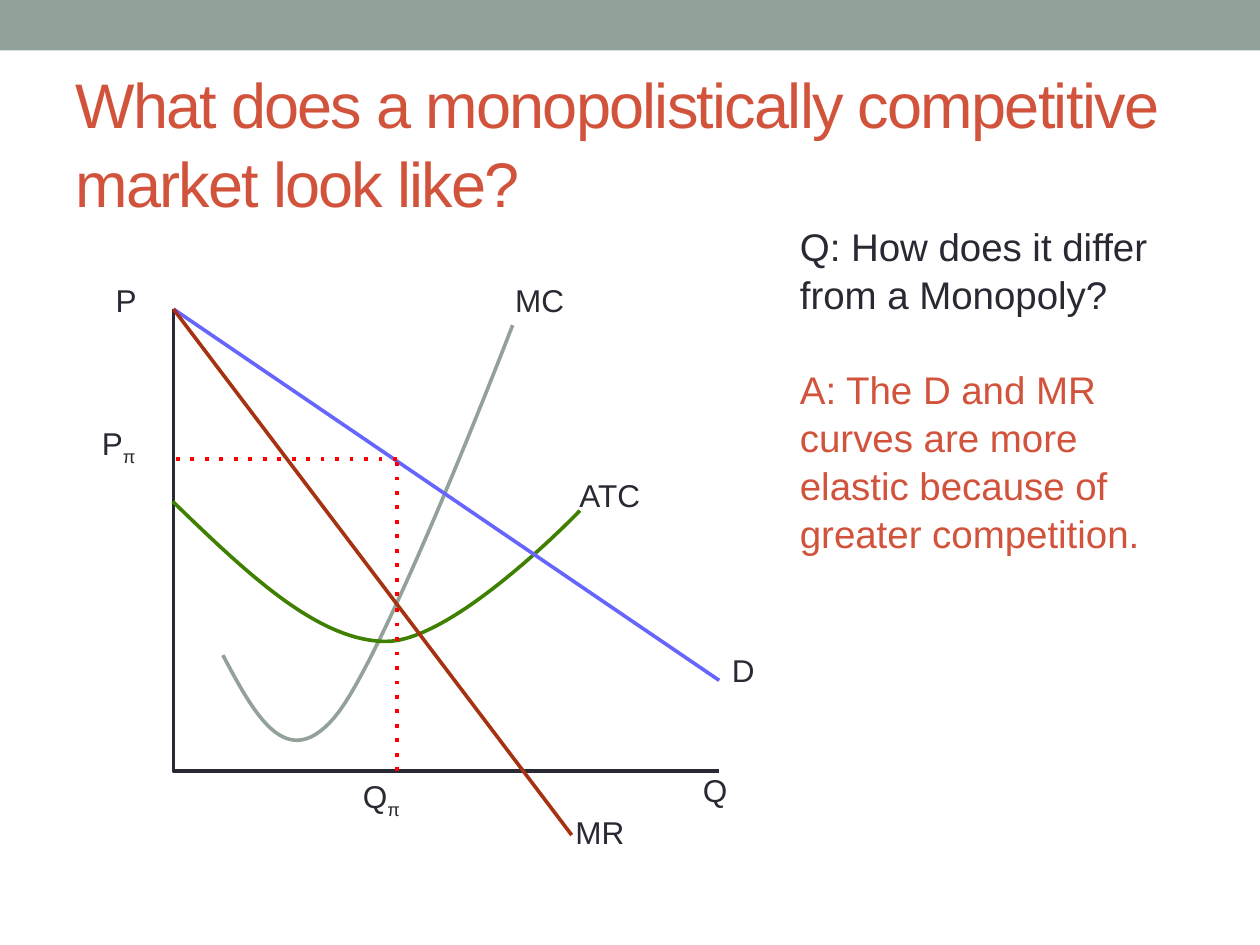
from lxml import etree
from pptx import Presentation
from pptx import util as u
from pptx.dml import color
from pptx.enum import dml, shapes, text
from pptx.oxml import ns

INK, RUST, SAGE = "292934", "D2533C", "93A299"
BLUE, BROWN, GREEN, RED = "6666FF", "A63212", "408000", "FF0000"


def rgb(value):
    return color.RGBColor.from_string(value)


def bezier(start, *segments, steps=30):
    points = [start]
    for control_1, control_2, end in segments:
        corners = (points[-1], control_1, control_2, end)
        for step in range(1, steps + 1):
            t = step / steps
            weights = ((1 - t) ** 3, 3 * t * (1 - t) ** 2, 3 * t * t * (1 - t), t ** 3)
            points.append(tuple(sum(w * c[axis] for w, c in zip(weights, corners))
                                for axis in (0, 1)))
    return points


class Sketch:
    """Draws the elements of an economics diagram on one slide."""

    font = "Arial"
    line_width = 2.08
    label_size = 18
    leading = 1.04

    def __init__(self, slide):
        self.slide = slide

    def bar(self, left, top, width, height, fill):
        shape = self.slide.shapes.add_shape(
            shapes.MSO_SHAPE.RECTANGLE, *map(u.Pt, (left, top, width, height)))
        shape.shadow.inherit = False
        shape.fill.solid()
        shape.fill.fore_color.rgb = rgb(fill)
        shape.line.fill.background()

    def style(self, run, size, ink):
        run.font.name = self.font
        run.font.size = u.Pt(size)
        run.font.color.rgb = rgb(ink)

    def stroke(self, shape, ink):
        shape.line.color.rgb = rgb(ink)
        shape.line.width = u.Pt(self.line_width)

    def box(self, left, top, width, height, wrap=True):
        frame = self.slide.shapes.add_textbox(
            *map(u.Pt, (left, top, width, height))).text_frame
        frame.word_wrap = wrap
        frame.auto_size = text.MSO_AUTO_SIZE.SHAPE_TO_FIT_TEXT
        return frame

    def title(self, words, left, top, width, height):
        frame = self.box(left, top, width, height)
        frame.auto_size = text.MSO_AUTO_SIZE.NONE
        frame.vertical_anchor = text.MSO_ANCHOR.MIDDLE
        frame.text = words
        paragraph = frame.paragraphs[0]
        paragraph.line_spacing = self.leading
        run = paragraph.runs[0]
        self.style(run, 36, RUST)
        run.font._element.set("spc", "-100")

    def body(self, entries, left, top, width, height, size, gap):
        frame = self.box(left, top, width, height)
        frame.text = "\n".join(words for words, ink in entries)
        for index, (paragraph, entry) in enumerate(zip(frame.paragraphs, entries)):
            paragraph.line_spacing = self.leading
            paragraph.space_before = u.Pt(gap if index else 0)
            self.style(paragraph.runs[0], size, entry[1])

    def label(self, words, left, top, width, subscript=""):
        frame = self.box(left, top, width, 39.6, wrap=False)
        frame.text = words
        paragraph = frame.paragraphs[0]
        if subscript:
            run = paragraph.add_run()
            run.text = subscript
            run.font._element.set("baseline", "-25000")
        for run in paragraph.runs:
            self.style(run, self.label_size, INK)

    def curve(self, points, ink):
        points = [tuple(map(u.Pt, point)) for point in points]
        builder = self.slide.shapes.build_freeform(*points[0])
        builder.add_line_segments(points[1:], close=False)
        shape = builder.convert_to_shape()
        shape.shadow.inherit = False
        shape.fill.background()
        self.stroke(shape, ink)

    def line(self, start, end, ink, dotted=False):
        connector = self.slide.shapes.add_connector(
            shapes.MSO_CONNECTOR.STRAIGHT, *map(u.Pt, start + end))
        self.stroke(connector, ink)
        properties = connector._element.spPr
        if dotted:
            connector.line.dash_style = dml.MSO_LINE.ROUND_DOT
            properties.find(".//" + ns.qn("a:prstDash")).set("val", "dot")
        etree.SubElement(properties, ns.qn("a:effectLst"))


def main():
    presentation = Presentation()
    presentation.slide_width, presentation.slide_height = u.Pt(720), u.Pt(540)
    sketch = Sketch(presentation.slides.add_slide(presentation.slide_layouts[6]))

    sketch.bar(0, 0, 720, 28.8, SAGE)
    sketch.title("What does a monopolistically competitive market look like?",
                 36, 41.8, 648, 77.8)

    left, top, right, bottom = 99.1, 176.6, 411, 440.6
    quantity, price = 226.8, 262.3
    sketch.curve([(left, top), (left, bottom), (right, bottom)], INK)
    marginal_cost = bezier((127.4, 374.4),
                           ((145.4, 408.2), (163.4, 442.1), (190.8, 410.4)),
                           ((218.9, 378.7), (293, 185.8), (293, 185.8)))
    average_cost = bezier((98.8, 286.6),
                          ((139.7, 326.2), (180.7, 365.8), (219.6, 366.5)),
                          ((258.5, 367.9), (331.4, 291.8), (331.4, 291.8)))
    sketch.curve(marginal_cost, SAGE)
    sketch.curve(average_cost, GREEN)
    sketch.line((left, top), (right, 388.8), BLUE)
    sketch.line((left, top), (326.7, 477.2), BROWN)
    for start, end in (((quantity, bottom), (quantity, 346.3)),
                       ((quantity, 340.6), (quantity, price)),
                       ((quantity, price), (left, price))):
        sketch.line(start, end, RED, dotted=True)

    for words, x, y, width, subscript in (
            ("Q", 394.6, 437, 45.4, ""),
            ("P", 59, 157, 37.4, ""),
            ("MC", 287.3, 157, 68.4, ""),
            ("ATC", 324, 268.6, 72.7, ""),
            ("D", 411.1, 368.6, 38.9, ""),
            ("MR", 321.8, 460.8, 62.6, ""),
            ("Q", 200.2, 440.6, 49, "π"),
            ("P", 51.1, 239, 47.5, "π")):
        sketch.label(words, x, y, width, subscript)

    sketch.body([("Q: How does it differ from a Monopoly?", INK),
                 ("A: The D and MR curves are more elastic because of greater competition.", RUST)],
                450, 123.1, 234, 193.7, size=22, gap=26.4)

    presentation.save("out.pptx")


if __name__ == "__main__":
    main()
